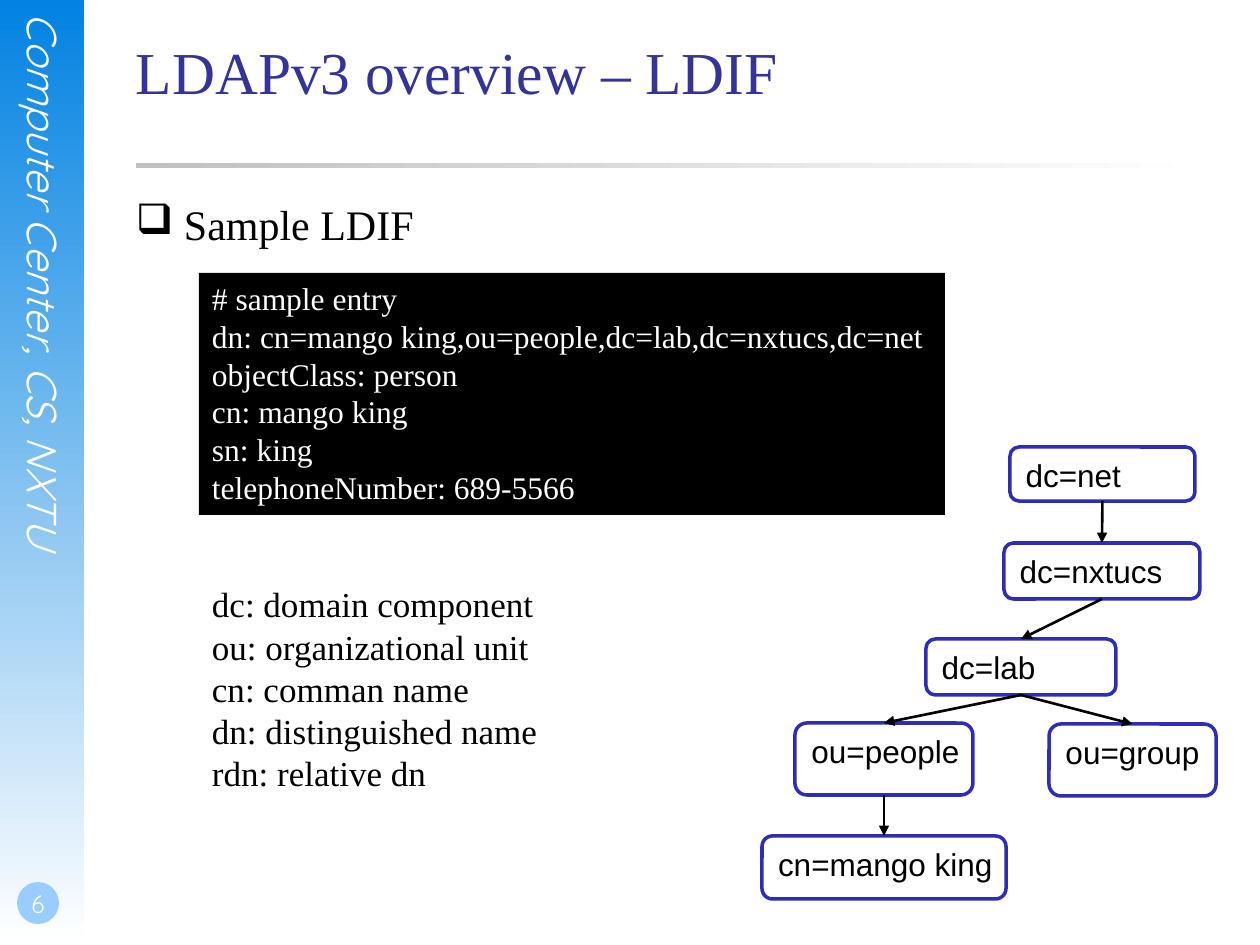
from lxml import etree
from pptx import Presentation, util as u
from pptx.dml.color import RGBColor
from pptx.enum import shapes, text
from pptx.oxml.ns import qn

PX = u.Inches(1) / 126
SERIF, SANS, HAND = "Times New Roman", "Arial", "Quicksand"
C = dict(white="FFFFFF", black="000000", title="333399", bar="0282E2",
         badge="99CCFF", rule="C0C0C0", node="2D2DB9")

LDIF = ["# sample entry",
        "dn: cn=mango king,ou=people,dc=lab,dc=nxtucs,dc=net",
        "objectClass: person", "cn: mango king", "sn: king",
        "telephoneNumber: 689-5566"]
TERMS = ["dc: domain component", "ou: organizational unit", "cn: comman name",
         "dn: distinguished name", "rdn: relative dn"]
# Directory entries: text, box relative to the tree
NODES = {
    "net": ("dc=net", (248, 0, 185, 54)),
    "site": ("dc=nxtucs", (242, 96, 196, 56)),
    "lab": ("dc=lab", (164, 192, 190, 56)),
    "people": ("ou=people", (33, 276, 178, 72)),
    "group": ("ou=group", (287, 277, 167, 72)),
    "king": ("cn=mango king", (0, 389, 244, 63)),
}
EDGES = [("net", "site"), ("site", "lab"), ("lab", "group"),
         ("people", "king"), ("lab", "people")]


def px(*values):
    return [u.Emu(round(v * PX)) for v in values]


def rgb(name):
    return RGBColor.from_string(C[name])


def write(sp, lines, size, font=SERIF, color="black", italic=None, align="LEFT",
          anchor="TOP", inset=(13, 6, 13, 6), wrap=True):
    """Fill a shape with one paragraph for each line."""
    tf = sp.text_frame
    tf.word_wrap = wrap
    tf.vertical_anchor = text.MSO_ANCHOR[anchor]
    tf.margin_left, tf.margin_top, tf.margin_right, tf.margin_bottom = px(*inset)
    for i, line in enumerate(lines):
        p = tf.add_paragraph() if i else tf.paragraphs[0]
        p.alignment = text.PP_ALIGN[align]
        r = p.add_run()
        r.text = line
        r.font.size, r.font.name, r.font.italic = u.Pt(size), font, italic
        r.font.color.rgb = rgb(color)
    return tf


def textbox(s, box, lines, size, **fmt):
    return write(s.shapes.add_textbox(*px(*box)), lines, size, **fmt)


def shape(s, kind, box, fill, line=None, angle=None):
    """Add a preset shape; an angle makes its fill fade to white."""
    sp = s.shapes.add_shape(shapes.MSO_SHAPE[kind], *px(*box))
    sp.shadow.inherit = False
    if angle is None:
        sp.fill.solid()
        sp.fill.fore_color.rgb = rgb(fill)
    else:
        sp.fill.gradient()
        sp.fill.gradient_angle = angle
        for stop, name in zip(sp.fill.gradient_stops, (fill, "white")):
            stop.color.rgb = rgb(name)
    if line:
        sp.line.color.rgb = rgb(line)
        sp.line.width = u.Pt(2)
    else:
        sp.line.fill.background()
    return sp


def arrow(s, parent, child):
    cn = s.shapes.add_connector(shapes.MSO_CONNECTOR.STRAIGHT, 0, 0, 0, 0)
    cn.begin_connect(parent, 2)
    cn.end_connect(child, 0)
    cn.line.color.rgb = rgb("black")
    cn.line.width = u.Pt(1.5)
    etree.SubElement(cn.line._get_or_add_ln(), qn("a:tailEnd"), type="triangle")
    etree.SubElement(cn._element.spPr, qn("a:effectLst"))


def sidebar(s, x, y, w, h):
    shape(s, "RECTANGLE", (x, y, w, h), "bar", angle=270)
    # Vertical label
    tf = textbox(s, (x + 19, y + 13, 50, 644), ["Computer Center, CS, NXTU"], 24,
                 font=HAND, color="white", italic=True, inset=(0, 0, 0, 0))
    tf._txBody.bodyPr.set("vert", "eaVert")
    # Page number
    shape(s, "OVAL", (x + 17, y + h - 63, 42, 42), "badge")
    textbox(s, (x, y + h - 84, 73, 63), ["6"], 14, font=HAND, color="white",
            align="CENTER", anchor="BOTTOM", inset=(3, 0, 0, 6))


def heading(s, x, y, w, h):
    shape(s, "RECTANGLE", (x, y + h - 5, w, 5), "rule", angle=0)
    textbox(s, (x, y, w, h), ["LDAPv3 overview – LDIF"], 34, color="title",
            inset=(0, 0, 0, 0))


def sample(s, x, y, w, h):
    # Bulleted line
    tf = textbox(s, (x, y, w, 60), ["Sample LDIF"], 24, inset=(0, 0, 0, 0))
    pPr = tf.paragraphs[0]._p.get_or_add_pPr()
    indent = px(48)[0]
    pPr.set("marL", str(indent))
    pPr.set("indent", str(-indent))
    before = etree.SubElement(pPr, qn("a:spcBef"))
    etree.SubElement(before, qn("a:spcPct"), val="25000")
    etree.SubElement(pPr, qn("a:buChar"), char="❑")
    # Code block and glossary
    code = shape(s, "RECTANGLE", (x + 63, y + 74, 746, 242), "black")
    write(code, LDIF, 18, color="white")
    textbox(s, (x + 63, y + h - 224, 494, 224), TERMS, 20)


def tree(s, x, y):
    boxes = {}
    for key, (label, (dx, dy, w, h)) in NODES.items():
        boxes[key] = shape(s, "ROUNDED_RECTANGLE", (x + dx, y + dy, w, h),
                           "white", line="node")
        write(boxes[key], [label], 18, font=SANS, wrap=False)
    for parent, child in EDGES:
        arrow(s, boxes[parent], boxes[child])


def main():
    prs = Presentation()
    prs.slide_width, prs.slide_height = px(1260, 945)
    s = prs.slides.add_slide(prs.slide_layouts[6])
    sidebar(s, 0, 0, 84, 945)
    heading(s, 136, 35, 1071, 133)
    sample(s, 136, 199, 1071, 602)
    tree(s, 762, 447)
    prs.save("out.pptx")


if __name__ == "__main__":
    main()
